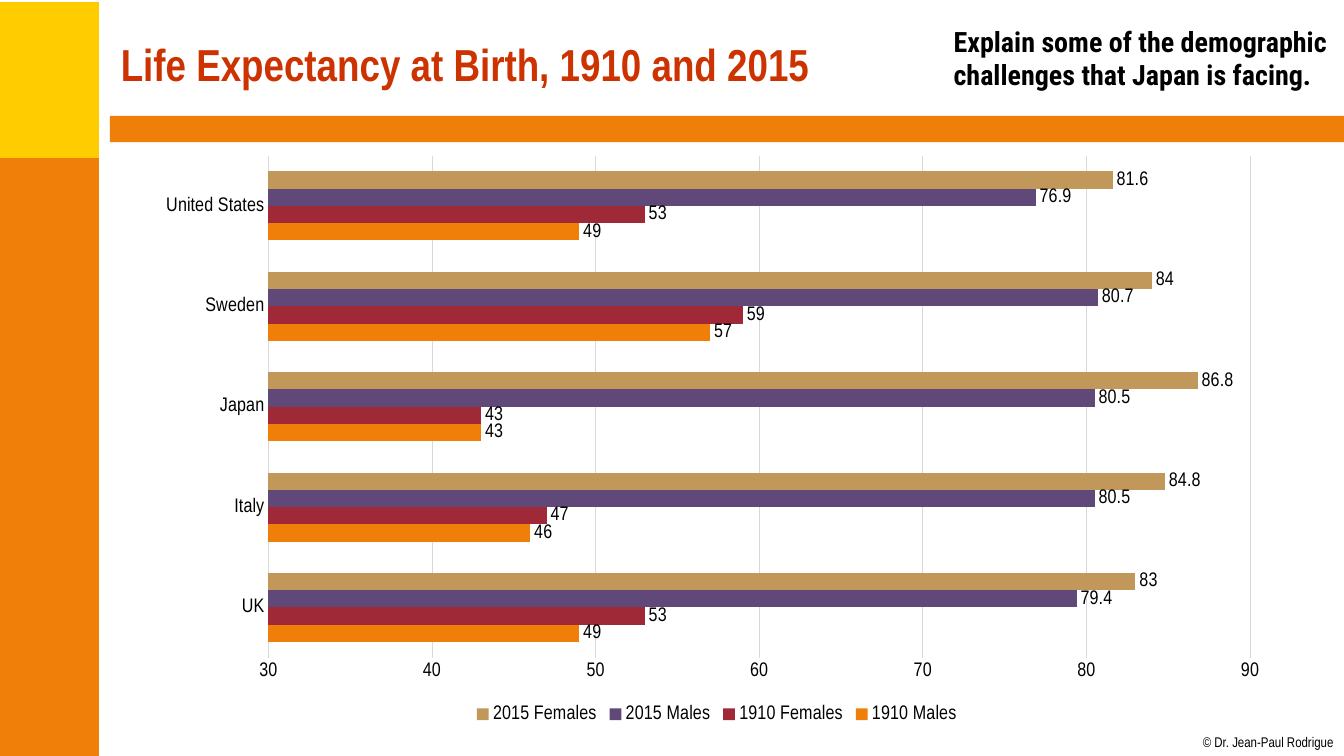
import pptx
import pptx.chart.data
import pptx.dml.color
import pptx.enum.chart
import pptx.enum.shapes
import pptx.enum.text
import pptx.oxml
import pptx.oxml.ns
import pptx.util

WIDTH, HEIGHT = 13.33, 7.5
COLORS = {
    "yellow": "FFCC00", "orange": "F07F09", "red": "9F2936", "purple": "604878",
    "tan": "C19859", "title": "CC3300", "text": "000000", "grid": "D9D9D9",
}
BODY_FONT = "Arial Narrow"
BANDS = [
    ("yellow", 0, 0.02, 0.98, 1.55),
    ("orange", 0, 1.57, 0.98, HEIGHT - 1.57),
    ("orange", 1.09, 1.15, WIDTH - 1.09, 0.26),
]
TEXTS = [
    ("© Dr. Jean-Paul Rodrigue", (11.93, 7.28, 1.31, 0.17), 10, BODY_FONT, "text", False, 0),
    ("Life Expectancy at Birth, 1910 and 2015", (1.1, 0.11, 8.2, 1.04), 32, BODY_FONT, "title", True, 0.1),
    ("Explain some of the demographic challenges that Japan is facing.",
     (9.36, 0.19, 3.97, 0.77), 20, "Roboto Condensed", "text", True, 0.1),
]
COUNTRIES = ["UK", "Italy", "Japan", "Sweden", "United States"]
SERIES = [
    ("1910 Males", "orange", (49, 46, 43, 57, 49)),
    ("1910 Females", "red", (53, 47, 43, 59, 53)),
    ("2015 Males", "purple", (79.4, 80.5, 80.5, 80.7, 76.9)),
    ("2015 Females", "tan", (83, 84.8, 86.8, 84, 81.6)),
]
CHART_BOX = (1.1, 1.43, 12.02, 5.79)
PLOT_SHARES = {"x": 0.13, "y": 0.02, "w": 0.81, "h": 0.86}


def color(name):
    return pptx.dml.color.RGBColor.from_string(COLORS[name])


def inches(box):
    return [pptx.util.Inches(length) for length in box]


def style_font(font, size, name=BODY_FONT, color_name="text", bold=False):
    font.size = pptx.util.Pt(size)
    font.name = name
    font.bold = bold
    font.color.rgb = color(color_name)


def add_band(slide, color_name, *box):
    shape = slide.shapes.add_shape(pptx.enum.shapes.MSO_SHAPE.RECTANGLE, *inches(box))
    shape.shadow.inherit = False
    shape.fill.solid()
    shape.fill.fore_color.rgb = color(color_name)
    shape.line.fill.background()


def add_text(slide, text, box, size, font_name, color_name, bold, inset):
    frame = slide.shapes.add_textbox(*inches(box)).text_frame
    frame.word_wrap = inset > 0
    frame.vertical_anchor = pptx.enum.text.MSO_ANCHOR.MIDDLE
    frame.margin_left = frame.margin_right = pptx.util.Inches(inset)
    frame.margin_top = frame.margin_bottom = pptx.util.Inches(inset / 2)
    paragraph = frame.paragraphs[0]
    paragraph.text = text
    style_font(paragraph.font, size, font_name, color_name, bold)


def style_line(line):
    line.color.rgb = color("grid")
    line.width = pptx.util.Pt(0.75)


def set_plot_layout(chart):
    plot_area = chart.plots[0]._element.getparent()
    for layout in plot_area.findall(pptx.oxml.ns.qn("c:layout")):
        plot_area.remove(layout)
    settings = {"layoutTarget": "inner", "xMode": "edge", "yMode": "edge", **PLOT_SHARES}
    values = "".join(f'<c:{tag} val="{value}"/>' for tag, value in settings.items())
    plot_area.insert(0, pptx.oxml.parse_xml(
        f'<c:layout {pptx.oxml.ns.nsdecls("c")}><c:manualLayout>{values}</c:manualLayout></c:layout>'))


def add_life_chart(slide):
    data = pptx.chart.data.CategoryChartData(number_format="General")
    data.categories = COUNTRIES
    for name, _, values in SERIES:
        data.add_series(name, values)
    chart = slide.shapes.add_chart(
        pptx.enum.chart.XL_CHART_TYPE.BAR_CLUSTERED, *inches(CHART_BOX), data).chart
    style_font(chart.font, 14)
    chart.has_title = False
    chart.has_legend = True
    chart.legend.position = pptx.enum.chart.XL_LEGEND_POSITION.BOTTOM
    chart.legend.include_in_layout = False
    style_font(chart.legend.font, 14)

    for axis in (chart.category_axis, chart.value_axis):
        axis.major_tick_mark = axis.minor_tick_mark = pptx.enum.chart.XL_TICK_MARK.NONE
        style_font(axis.tick_labels.font, 14)
    style_line(chart.category_axis.format.line)
    chart.value_axis.format.line.fill.background()
    chart.value_axis.minimum_scale = 30
    chart.value_axis.maximum_scale = 90
    chart.value_axis.major_unit = 10
    chart.value_axis.has_major_gridlines = True
    style_line(chart.value_axis.major_gridlines.format.line)

    plot = chart.plots[0]
    plot.gap_width = 182
    plot.overlap = 0
    plot.vary_by_categories = False
    for series, (_, color_name, _) in zip(plot.series, SERIES):
        series.format.fill.solid()
        series.format.fill.fore_color.rgb = color(color_name)
        labels = series.data_labels
        labels.show_value = True
        labels.position = pptx.enum.chart.XL_LABEL_POSITION.OUTSIDE_END
        style_font(labels.font, 14)
    set_plot_layout(chart)


def main():
    presentation = pptx.Presentation()
    presentation.slide_width, presentation.slide_height = inches((WIDTH, HEIGHT))
    slide = presentation.slides.add_slide(presentation.slide_layouts[6])
    for band in BANDS:
        add_band(slide, *band)
    for text in TEXTS:
        add_text(slide, *text)
    add_life_chart(slide)
    presentation.save("out.pptx")


if __name__ == "__main__":
    main()
